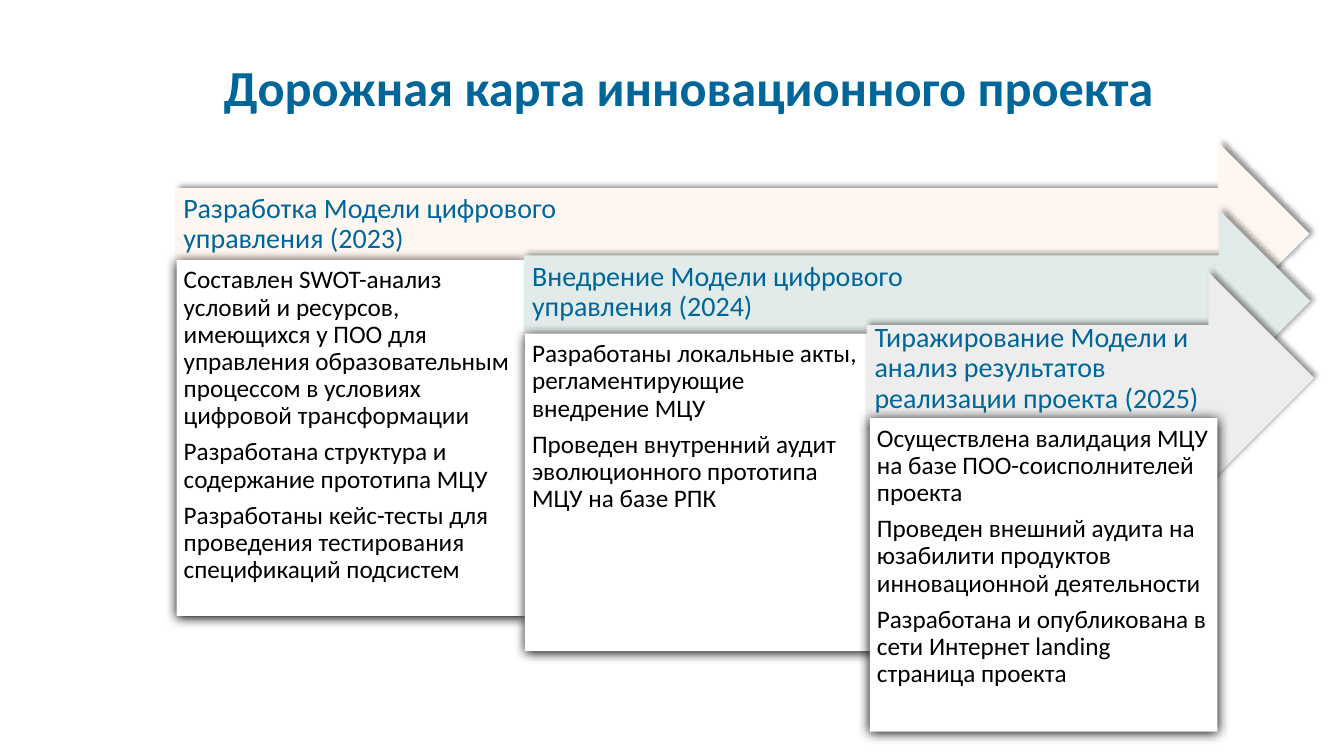
"""Build the roadmap slide with three stepped arrows and their result cards."""
from lxml import etree
from pptx import Presentation
from pptx import util as u
from pptx.dml.color import RGBColor
from pptx.enum import shapes, text
from pptx.oxml.ns import qn

TITLE = "Дорожная карта инновационного проекта"
STAGES = [
    {
        "heading": ["Разработка Модели цифрового", "управления (2023)"],
        "results": [
            "Составлен SWOT-анализ условий и ресурсов, имеющихся у ПОО для "
            "управления образовательным процессом в условиях цифровой трансформации",
            "Разработана структура и содержание прототипа МЦУ",
            "Разработаны кейс-тесты для проведения тестирования спецификаций подсистем",
        ],
        "fill": "cream",
        "arrow": (4.42, 3.58, 28.58, 4.62),
        "card": (4.45, 6.55, 8.79, 8.97),
    },
    {
        "heading": ["Внедрение Модели цифрового", "управления (2024)"],
        "results": [
            "Разработаны локальные акты, регламентирующие внедрение МЦУ",
            "Проведен внутренний аудит эволюционного прототипа МЦУ на базе РПК",
        ],
        "fill": "mint",
        "arrow": (13.21, 5.28, 19.81, 4.62),
        "card": (13.23, 8.41, 8.79, 8.0),
    },
    {
        "heading": ["Тиражирование Модели и анализ результатов реализации проекта (2025)"],
        "results": [
            "Осуществлена валидация МЦУ на базе ПОО-соисполнителей проекта",
            "Проведен внешний аудита на юзабилити продуктов инновационной деятельности",
            "Разработана и опубликована в сети Интернет landing страница проекта",
        ],
        "fill": "grey",
        "arrow": (21.84, 6.86, 11.28, 5.33),
        "card": (21.92, 10.54, 8.76, 7.9),
    },
]
COLORS = {"blue": "006699", "black": "000000", "white": "FFFFFF",
          "cream": "FEF6F0", "mint": "E1EBEA", "grey": "EDEDED"}
FONT = "Calibri"
ARROW_SHADOW = {"opacity": 40, "blur": 4, "distance": 3, "angle": 315}
CARD_SHADOW = {"opacity": 100, "blur": 8.5, "distance": 1, "angle": 90}
ARROW_INSETS = (0.2, 0.2, 0.71, 0.66)
CARD_INSETS = (0.18,) * 4


def color(name):
    return RGBColor.from_string(COLORS[name])


def add_shadow(shape, opacity, blur, distance, angle):
    shape.shadow.inherit = False
    effects = shape._element.spPr.find(qn("a:effectLst"))
    shadow = etree.SubElement(effects, qn("a:outerShdw"), {
        "blurRad": str(u.Pt(blur)), "dist": str(u.Pt(distance)),
        "dir": str(angle * 60000), "algn": "ctr", "rotWithShape": "0"})
    tone = etree.SubElement(shadow, qn("a:srgbClr"), val=COLORS["black"])
    etree.SubElement(tone, qn("a:alpha"), val=str(opacity * 1000))


def add_panel(page, kind, place, fill, shadow, insets, anchor):
    panel = page.shapes.add_shape(kind, *map(u.Cm, place))
    panel.fill.solid()
    panel.fill.fore_color.rgb = color(fill)
    panel.line.fill.background()
    add_shadow(panel, **shadow)
    frame = panel.text_frame
    frame.word_wrap = True
    frame.vertical_anchor = anchor
    (frame.margin_left, frame.margin_top,
     frame.margin_right, frame.margin_bottom) = map(u.Cm, insets)
    return frame


def write(para, lines, size, tone, bold=False, align=text.PP_ALIGN.LEFT):
    para.alignment = align
    para.line_spacing = 0.9
    para.space_after = u.Pt(size * 0.35)
    for index, line in enumerate(lines):
        if index:
            para.add_line_break()
        span = para.add_run()
        span.text = line
        span.font.name = FONT
        span.font.size = u.Pt(size)
        span.font.bold = bold
        span.font.color.rgb = color(tone)


def add_title(page):
    title = page.shapes.title
    title.left, title.top, title.width, title.height = map(u.Cm, (4.27, 0.43, 26.19, 3.68))
    frame = title.text_frame
    frame.word_wrap = True
    frame.auto_size = text.MSO_AUTO_SIZE.NONE
    frame.vertical_anchor = text.MSO_ANCHOR.MIDDLE
    write(frame.paragraphs[0], [TITLE], 36, "blue", True, text.PP_ALIGN.CENTER)


def add_stage(page, stage):
    arrow = add_panel(page, shapes.MSO_SHAPE.RIGHT_ARROW, stage["arrow"], stage["fill"],
                      ARROW_SHADOW, ARROW_INSETS, text.MSO_ANCHOR.MIDDLE)
    write(arrow.paragraphs[0], stage["heading"], 20, "blue")
    card = add_panel(page, shapes.MSO_SHAPE.RECTANGLE, stage["card"], "white",
                     CARD_SHADOW, CARD_INSETS, text.MSO_ANCHOR.TOP)
    for index, result in enumerate(stage["results"]):
        para = card.add_paragraph() if index else card.paragraphs[0]
        write(para, [result], 18, "black")


def main():
    deck = Presentation()
    deck.slide_width, deck.slide_height = u.Cm(33.87), u.Cm(19.05)
    page = deck.slides.add_slide(deck.slide_layouts[5])
    add_title(page)
    for stage in STAGES:
        add_stage(page, stage)
    deck.save("out.pptx")


if __name__ == "__main__":
    main()
